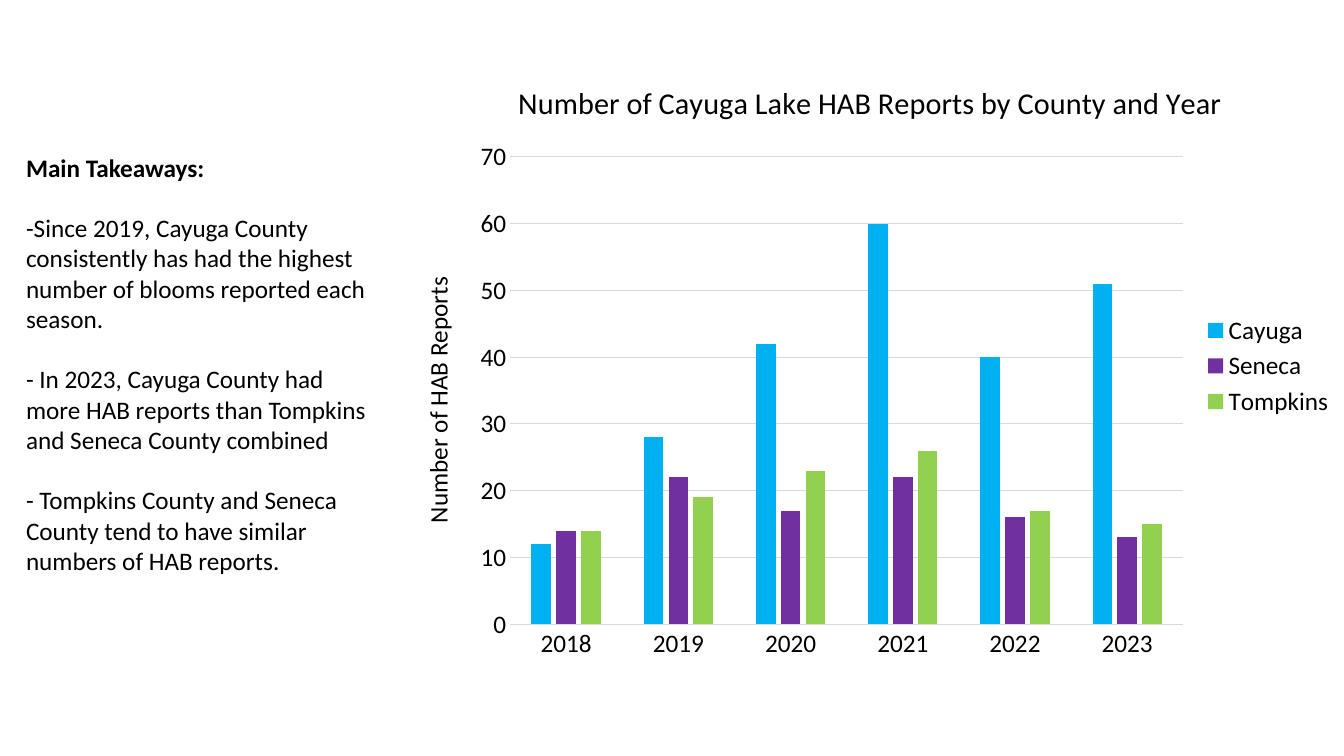
from dataclasses import dataclass

from lxml import etree
from pptx import Presentation
from pptx import util as u
from pptx.chart.data import CategoryChartData
from pptx.dml.color import RGBColor
from pptx.enum import chart as ch
from pptx.enum import text

FONT = "Calibri"
BLACK = "000000"
GRID = "D9D9D9"
YEARS = ["2018", "2019", "2020", "2021", "2022", "2023"]


@dataclass
class County:
    name: str
    reports: list[int]
    color: str


@dataclass
class Takeaway:
    words: str
    bold: bool = False
    gap: float = 21.6


COUNTIES = [
    County("Cayuga", [12, 28, 42, 60, 40, 51], "00B0F0"),
    County("Seneca", [14, 22, 17, 22, 16, 13], "7030A0"),
    County("Tompkins", [14, 19, 23, 26, 17, 15], "92D050"),
]
TAKEAWAYS = [
    Takeaway("Main Takeaways:", bold=True, gap=0),
    Takeaway("-Since 2019, Cayuga County consistently has had the highest "
             "number of blooms reported each season."),
    Takeaway("- In 2023, Cayuga County had more HAB reports than Tompkins "
             "and Seneca County combined"),
    Takeaway("- Tompkins County and Seneca County tend to have similar "
             "numbers of HAB reports."),
]


def rgb(value: str) -> RGBColor:
    return RGBColor.from_string(value)


def style_font(font, size: float = 18, bold: bool = False) -> None:
    font.name = FONT
    font.size = u.Pt(size)
    font.bold = bold
    font.color.rgb = rgb(BLACK)


def style_line(line) -> None:
    line.color.rgb = rgb(GRID)
    line.width = u.Pt(0.75)


def add_title(owner, words: str, size: float = 18) -> None:
    r = owner.text_frame.paragraphs[0].add_run()
    r.text = words
    style_font(r.font, size)


def place_plot(chart, x: float, y: float, w: float, h: float) -> None:
    area = chart.element.chart.plotArea
    ns = area.nsmap["c"]
    for old in area.findall(f"{{{ns}}}layout"):
        area.remove(old)
    layout = etree.Element(f"{{{ns}}}layout")
    manual = etree.SubElement(layout, f"{{{ns}}}manualLayout")
    settings = [("layoutTarget", "inner"), ("xMode", "edge"), ("yMode", "edge"),
                ("x", x), ("y", y), ("w", w), ("h", h)]
    for tag, value in settings:
        etree.SubElement(manual, f"{{{ns}}}{tag}").set("val", str(value))
    area.insert(0, layout)


def add_report_chart(s) -> None:
    data = CategoryChartData()
    data.categories = YEARS
    for county in COUNTIES:
        data.add_series(county.name, county.reports)
    chart = s.shapes.add_chart(
        ch.XL_CHART_TYPE.COLUMN_CLUSTERED,
        u.Pt(283), u.Pt(41.8), u.Pt(677.5), u.Pt(439.2), data).chart
    style_font(chart.font)
    chart.has_title = True
    add_title(chart.chart_title,
              "Number of Cayuga Lake HAB Reports by County and Year", 21.6)
    chart.chart_title.include_in_layout = False

    chart.has_legend = True
    chart.legend.position = ch.XL_LEGEND_POSITION.RIGHT
    chart.legend.include_in_layout = False
    style_font(chart.legend.font)

    years, counts = chart.category_axis, chart.value_axis
    for axis in (years, counts):
        axis.major_tick_mark = ch.XL_TICK_MARK.NONE
        axis.minor_tick_mark = ch.XL_TICK_MARK.NONE
        style_font(axis.tick_labels.font)
    style_line(years.format.line)
    counts.format.line.fill.background()
    counts.minimum_scale, counts.maximum_scale, counts.major_unit = 0, 70, 10
    style_line(counts.major_gridlines.format.line)
    add_title(counts.axis_title, "Number of HAB Reports")

    plot = chart.plots[0]
    plot.vary_by_categories = False
    plot.gap_width = 219
    plot.overlap = -27
    for series, county in zip(plot.series, COUNTIES):
        series.format.fill.solid()
        series.format.fill.fore_color.rgb = rgb(county.color)
    place_plot(chart, 0.12, 0.16, 0.71, 0.76)


def add_takeaways(s) -> None:
    sp = s.shapes.add_textbox(u.Pt(11.5), u.Pt(105.1), u.Pt(258.5), u.Pt(312.5))
    tf = sp.text_frame
    tf.word_wrap = True
    tf.auto_size = text.MSO_AUTO_SIZE.SHAPE_TO_FIT_TEXT
    for i, takeaway in enumerate(TAKEAWAYS):
        p = tf.add_paragraph() if i else tf.paragraphs[0]
        p.space_before = u.Pt(takeaway.gap)
        r = p.add_run()
        r.text = takeaway.words
        style_font(r.font, bold=takeaway.bold)


def main() -> None:
    prs = Presentation()
    prs.slide_width, prs.slide_height = u.Pt(960), u.Pt(540)
    s = prs.slides.add_slide(prs.slide_layouts[6])
    add_report_chart(s)
    add_takeaways(s)
    prs.save("out.pptx")


if __name__ == "__main__":
    main()
